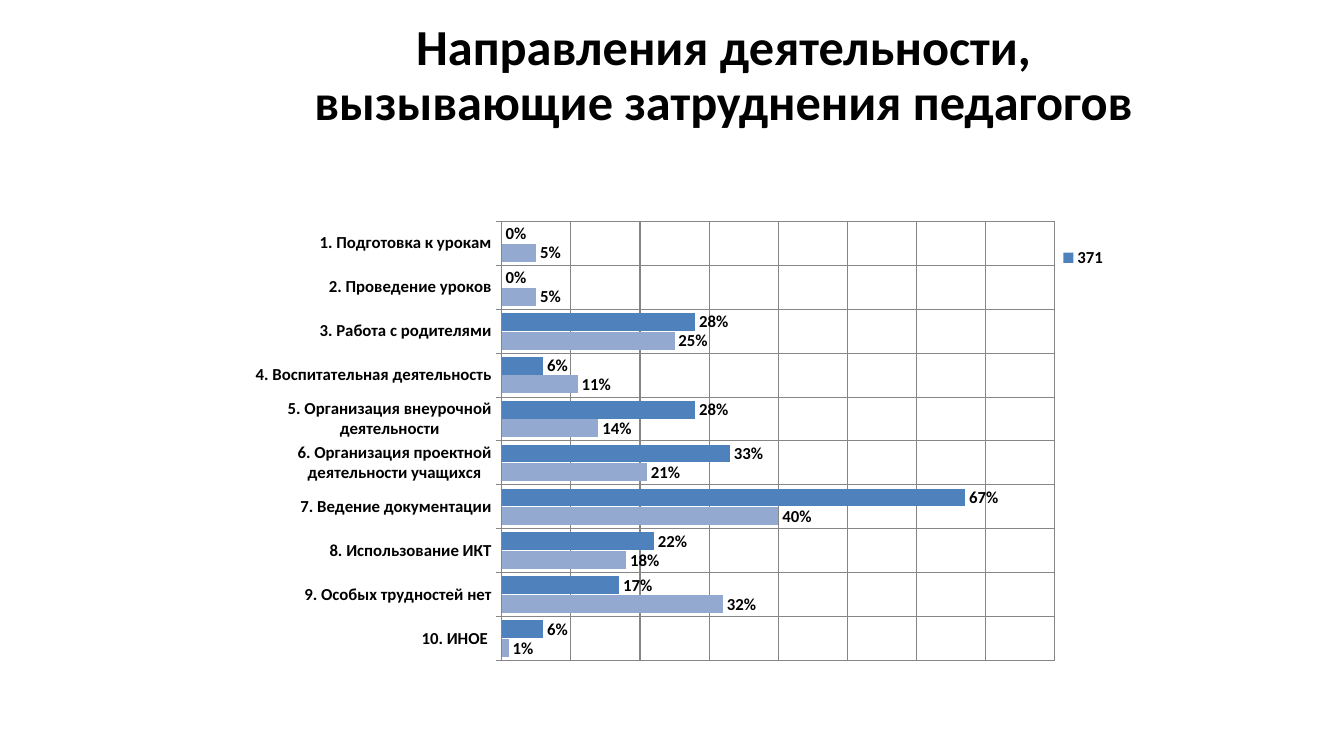
import pptx
import pptx.chart.data
import pptx.dml.color
import pptx.enum.chart
import pptx.enum.text
import pptx.oxml
import pptx.oxml.ns
import pptx.util

Pt = pptx.util.Pt
BLACK = pptx.dml.color.RGBColor(0x00, 0x00, 0x00)
GRID = pptx.dml.color.RGBColor(0x86, 0x86, 0x86)
BLUE = pptx.dml.color.RGBColor(0x4F, 0x81, 0xBD)
PALE_BLUE = pptx.dml.color.RGBColor(0x93, 0xA9, 0xCF)

TITLE = "Направления деятельности, вызывающие затруднения педагогов"
DIFFICULTIES = [
    ("1. Подготовка к урокам", 0, 0.05),
    ("2. Проведение уроков", 0, 0.05),
    ("3. Работа с родителями", 0.28, 0.25),
    ("4. Воспитательная деятельность", 0.06, 0.11),
    ("5. Организация внеурочной деятельности", 0.28, 0.14),
    ("6. Организация проектной деятельности учащихся", 0.33, 0.21),
    ("7. Ведение документации", 0.67, 0.4),
    ("8. Использование ИКТ", 0.22, 0.18),
    ("9. Особых трудностей нет", 0.17, 0.32),
    ("10. ИНОЕ ", 0.06, 0.01),
]


def manual_layout(target, **fractions):
    """Return a c:layout element placing a chart part by fractions of the chart."""
    inner = f'<c:layoutTarget val="{target}"/>' if target else ""
    modes = "".join(f'<c:{key}Mode val="edge"/>' for key in "xy")
    sizes = "".join(f'<c:{key} val="{value}"/>' for key, value in fractions.items())
    return pptx.oxml.parse_xml(
        f"<c:layout {pptx.oxml.ns.nsdecls('c')}><c:manualLayout>"
        f"{inner}{modes}{sizes}</c:manualLayout></c:layout>")


class SlideBuilder:
    def __init__(self, deck, font="Calibri"):
        self.font = font
        self.page = deck.slides.add_slide(deck.slide_layouts[5])

    def style(self, font, size):
        font.name, font.size, font.bold = self.font, Pt(size), True
        font.color.rgb = BLACK

    def title(self, text, left, top, width, height):
        box = self.page.shapes.title
        box.left, box.top, box.width, box.height = map(Pt, (left, top, width, height))
        frame = box.text_frame
        frame.text = text
        frame.word_wrap = True
        frame.vertical_anchor = pptx.enum.text.MSO_ANCHOR.MIDDLE
        para = frame.paragraphs[0]
        para.alignment = pptx.enum.text.PP_ALIGN.CENTER
        para.line_spacing = 0.9
        self.style(para.runs[0].font, 36)

    def bar_chart(self, rows, series, left, top, width, height):
        """Draw clustered bars; series is a list of (name, colour)."""
        data = pptx.chart.data.CategoryChartData(number_format="0%")
        labels, *columns = zip(*rows)
        data.categories = labels
        for (name, _), values in zip(series, columns):
            data.add_series(name, values)
        chart = self.page.shapes.add_chart(
            pptx.enum.chart.XL_CHART_TYPE.BAR_CLUSTERED,
            *map(Pt, (left, top, width, height)), data).chart
        chart.has_title = False
        self.style(chart.font, 12)

        plot = chart.plots[0]
        plot.vary_by_categories = False
        plot.gap_width, plot.overlap = 40, -5
        for bars, (_, colour) in zip(plot.series, series):
            bars.format.fill.solid()
            bars.format.fill.fore_color.rgb = colour
            tags = bars.data_labels
            tags.show_value = True
            tags.number_format, tags.number_format_is_linked = "0%", False
            tags.position = pptx.enum.chart.XL_LABEL_POSITION.OUTSIDE_END
            self.style(tags.font, 12)
        self.axes(chart)
        self.legend(chart)

        area = chart._chartSpace.chart.plotArea
        for old in area.findall(pptx.oxml.ns.qn("c:layout")):
            area.remove(old)
        area.insert(0, manual_layout("inner", x=0.312, y=0.09, w=0.61, h=0.881))

    def axes(self, chart):
        categories, values = chart.category_axis, chart.value_axis
        categories.reverse_order = True
        categories.major_tick_mark = pptx.enum.chart.XL_TICK_MARK.OUTSIDE
        values.minimum_scale, values.maximum_scale, values.major_unit = 0, 0.8, 0.1
        values.visible = False
        for axis in (categories, values):
            axis.has_major_gridlines = True
            for line in (axis.format.line, axis.major_gridlines.format.line):
                line.color.rgb = GRID
                line.width = Pt(0.75)

    def legend(self, chart):
        """Show a legend entry for the named series only."""
        chart.has_legend = True
        legend = chart.legend
        legend.position = pptx.enum.chart.XL_LEGEND_POSITION.RIGHT
        legend.include_in_layout = False
        self.style(legend.font, 12)
        element = legend._element
        for old in element.findall(pptx.oxml.ns.qn("c:layout")):
            element.remove(old)
        unnamed_entry = pptx.oxml.parse_xml(
            f"<c:legendEntry {pptx.oxml.ns.nsdecls('c')}>"
            '<c:idx val="0"/><c:delete val="1"/></c:legendEntry>')
        element.insert(1, unnamed_entry)
        element.insert(2, manual_layout("", x=0.925, y=0.135))


def main():
    deck = pptx.Presentation()
    deck.slide_width, deck.slide_height = Pt(960), Pt(540)
    slide = SlideBuilder(deck)
    slide.title(TITLE, 202.3, 9.4, 629.3, 90.7)
    slide.bar_chart(DIFFICULTIES, [("371", BLUE), ("", PALE_BLUE)],
                    156.2, 126, 648, 356.4)
    deck.save("out.pptx")


if __name__ == "__main__":
    main()
